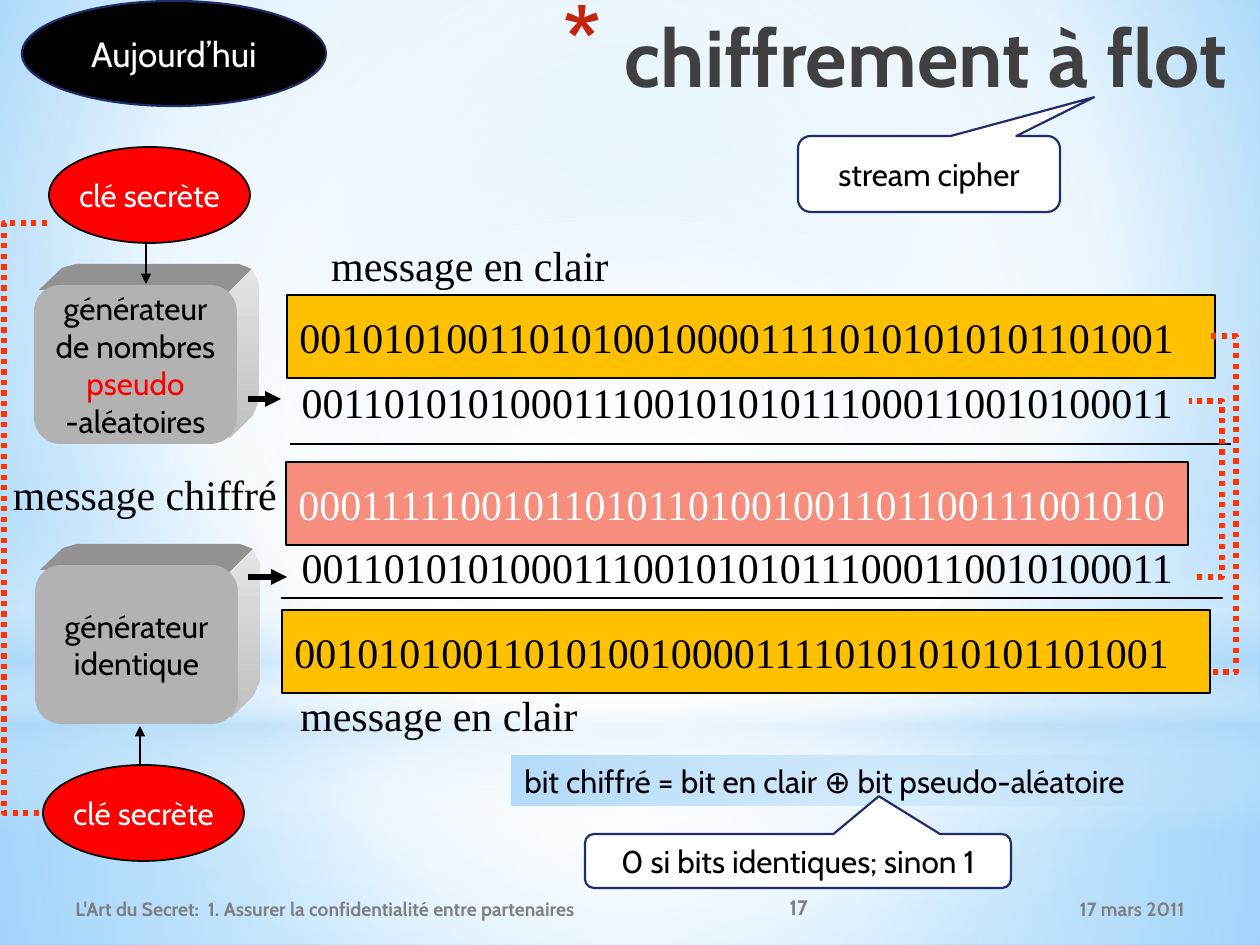
from pptx import Presentation
from pptx.dml.color import RGBColor
from pptx.enum.dml import MSO_LINE
from pptx.enum.shapes import MSO_CONNECTOR, MSO_SHAPE
from pptx.enum.text import MSO_ANCHOR, PP_ALIGN
from pptx.oxml.ns import qn
from pptx.util import Pt
from lxml import etree

RECT, OVAL = MSO_SHAPE.RECTANGLE, MSO_SHAPE.OVAL
ROUND, CALL = MSO_SHAPE.ROUNDED_RECTANGLE, MSO_SHAPE.ROUNDED_RECTANGULAR_CALLOUT
LEFT, MID, RIGHT = PP_ALIGN.LEFT, PP_ALIGN.CENTER, PP_ALIGN.RIGHT
TOP, CENTER = MSO_ANCHOR.TOP, MSO_ANCHOR.MIDDLE
DOTS = MSO_LINE.ROUND_DOT
STRAIGHT = MSO_CONNECTOR.STRAIGHT
PX = 914400 / 126
HEX = {
    "black": "000000", "white": "FFFFFF", "red": "FF0000", "gold": "FFC000",
    "pink": "F78D7C", "navy": "1F2E69", "dots": "FF3300", "sky": "B4DCFA",
    "grey": "808080", "title": "404040", "star": "C3260C", "front": "B2B2B2",
    "lid": "929292", "side": "C0C0C0", "shine": "E4E4E4",
    "pale": "9ED5FF", "deep": "5BB9FF",
}
RGB = {name: RGBColor.from_string(code) for name, code in HEX.items()}
SANS, SERIF = "Cabin", "Times New Roman"


def shade(fill, root, stops, focus=None, angle=0):
    fill.gradient()
    grad = next(root.iter(qn("a:gradFill")))
    for part in list(grad):
        grad.remove(part)
    row = etree.SubElement(grad, qn("a:gsLst"))
    for pos, name, alpha in stops:
        stop = etree.SubElement(row, qn("a:gs"), pos=str(pos * 1000))
        tint = etree.SubElement(stop, qn("a:srgbClr"), val=HEX[name])
        if alpha < 100:
            etree.SubElement(tint, qn("a:alpha"), val=str(alpha * 1000))
    if focus:
        ring = etree.SubElement(grad, qn("a:path"), path="circle")
        sides = {k: str(v * 1000) for k, v in zip("ltrb", focus)}
        etree.SubElement(ring, qn("a:fillToRect"), **sides)
    else:
        etree.SubElement(grad, qn("a:lin"), ang=str(angle * 60000), scaled="0")


def put(kind, box, text="", size=18, ink="black", face=SANS, fill=None,
        edge=None, width=1, align=MID, anchor=CENTER, bold=False):
    place = [round(v * PX) for v in box]
    if kind is None:
        shape = slide.shapes.add_textbox(*place)
    else:
        shape = slide.shapes.add_shape(kind, *place)
        shape.shadow.inherit = False
        shape.line.fill.background()
    if fill:
        shape.fill.solid()
        shape.fill.fore_color.rgb = RGB[fill]
    if edge:
        shape.line.color.rgb = RGB[edge]
        shape.line.width = Pt(width)
    if text:
        frame = shape.text_frame
        frame.text = text
        frame.word_wrap = align != MID
        frame.vertical_anchor = anchor
        for para in frame.paragraphs:
            para.alignment = align
            font = para.font
            font.name, font.size, font.bold = face, Pt(size), bold
            font.color.rgb = RGB[ink]
    return shape


deck = Presentation()
deck.slide_width, deck.slide_height = round(1260 * PX), round(945 * PX)
slide = deck.slides.add_slide(deck.slide_layouts[6])
shade(slide.background.fill, slide.element,
      [(0, "pale", 100), (60, "white", 100), (100, "deep", 100)], (20, 10, 20, 60))

core = (50, 50, 50, 50)
for kind, box, stops, focus in [
    (RECT, (0, 703, 1260, 242),
     [(0, "white", 91), (37, "white", 76), (100, "sky", 79)], core),
    (RECT, (0, 0, 1260, 703),
     [(0, "white", 89), (48, "white", 62), (100, "sky", 79)], core),
    (RECT, (0, 519, 1260, 315),
     [(0, "white", 0), (29, "white", 30), (45, "sky", 40), (55, "white", 26),
      (65, "sky", 60), (100, "white", 0)], None),
    (OVAL, (0, 220, 1260, 703), [(0, "white", 100), (56, "white", 0)], core),
]:
    layer = put(kind, box)
    shade(layer.fill, layer.element, stops, focus, 90)

title = put(None, (0, 1, 1239, 158), " chiffrement à flot", 46, "title",
            align=RIGHT, anchor=TOP, bold=True)
props = title.text_frame.paragraphs[0]._p.get_or_add_pPr()
props.set("marL", "320040")
props.set("indent", "-320040")
tint = etree.Element(qn("a:buClr"))
etree.SubElement(tint, qn("a:srgbClr"), val=HEX["star"])
scale = etree.Element(qn("a:buSzPct"), val="128000")
star = etree.Element(qn("a:buChar"), char="*")
for spot, node in enumerate([tint, scale, star]):
    props.insert(spot, node)

for box, text, size, align in [
    ((850, 884, 347, 50), "17 mars 2011", 11, RIGHT),
    ((63, 884, 683, 50),
     "L'Art du Secret:  1. Assurer la confidentialité entre partenaires", 11, LEFT),
    ((746, 882, 105, 50), "17", 12, MID),
]:
    put(None, box, text, size, "grey", align=align, bold=True)

plain = "001010100110101001000011110101010101101001"
noise = "001101010100011100101010111000110010100011"
secret = "000111110010110101101001001101100111001010"
for box, bits, fill, ink in [
    ((287, 295, 928, 83), plain, "gold", "black"),
    ((282, 610, 928, 83), plain, "gold", "black"),
    ((286, 462, 902, 83), secret, "pink", "white"),
]:
    put(RECT, box, bits, 24, ink, SERIF, fill, "black", align=LEFT)
for box, text in [
    ((309, 233, 322, 63), "message en clair"),
    ((278, 683, 322, 63), "message en clair"),
    ((0, 462, 290, 63), "message chiffré"),
    ((262, 370, 950, 63), noise),
    ((262, 535, 950, 63), noise),
]:
    put(None, box, text, 24, face=SERIF, anchor=TOP)

lid = [(5, 26), (28, 4), (42, 0), (205, 0), (218, 5), (195, 28)]
side = [(195, 28), (218, 5), (225, 20), (225, 136), (218, 152), (195, 174)]
for left, top, text in [
    (34, 264, "générateur\nde nombres\npseudo\n-aléatoires"),
    (35, 544, "générateur\nidentique"),
]:
    for face in (lid, side):
        pts = [(left + x, top + y) for x, y in face]
        pen = slide.shapes.build_freeform(*pts[0], scale=PX)
        pen.add_line_segments(pts[1:])
        wall = pen.convert_to_shape()
        wall.shadow.inherit = False
        wall.line.fill.background()
        if face is side:
            shade(wall.fill, wall.element,
                  [(0, "shine", 100), (100, "side", 100)], angle=90)
        else:
            wall.fill.solid()
            wall.fill.fore_color.rgb = RGB["lid"]
    cube = put(ROUND, (left, top + 21, 203, 159), text, fill="front")
    for para in cube.text_frame.paragraphs:
        if para.text == "pseudo":
            para.font.color.rgb = RGB["red"]

for left, top in [(49, 147), (43, 765)]:
    put(OVAL, (left, top, 201, 96), "clé secrète", 18, "white", fill="red", edge="black")

for x1, y1, x2, y2, width, tip in [
    (146, 241, 146, 284, 1, True),
    (248, 399, 281, 399, 3, True),
    (140, 767, 140, 726, 1, True),
    (248, 577, 287, 577, 3, True),
    (290, 444, 1231, 444, 1, False),
    (281, 598, 1223, 598, 1, False),
]:
    line = slide.shapes.add_connector(
        STRAIGHT, *[round(v * PX) for v in (x1, y1, x2, y2)])
    line.line.color.rgb = RGB["black"]
    line.line.width = Pt(width)
    if tip:
        etree.SubElement(line.line._get_or_add_ln(), qn("a:tailEnd"), type="triangle")
    etree.SubElement(line.element.spPr, qn("a:effectLst"))

for start, turn, low, high, end in [
    (39, 4, 813, 223, 50), (1197, 1222, 577, 401, 1189), (1213, 1236, 672, 336, 1206),
]:
    pen = slide.shapes.build_freeform(start, low, scale=PX)
    pen.add_line_segments([(turn, low), (turn, high), (end, high)], close=False)
    loop = pen.convert_to_shape()
    loop.shadow.inherit = False
    loop.fill.background()
    loop.line.color.rgb = RGB["dots"]
    loop.line.width = Pt(3)
    loop.line.dash_style = DOTS

rule = put(RECT, (512, 756, 704, 50),
           "bit chiffré = bit en clair ⊕ bit pseudo-aléatoire", align=LEFT)
shade(rule.fill, rule.element, [(0, "sky", 100), (100, "sky", 0)])
for box, text, adj in [
    ((798, 136, 262, 76), "stream cipher", (0.63, -1.01)),
    ((585, 834, 426, 54), "0 si bits identiques; sinon 1", (0.19, -1.2)),
]:
    note = put(CALL, box, text, fill="white", edge="navy", width=1.25)
    note.adjustments[0], note.adjustments[1] = adj
put(OVAL, (22, 1, 304, 105), "Aujourd’hui", 20, "white",
    fill="black", edge="navy", width=1.25)

deck.save("out.pptx")
